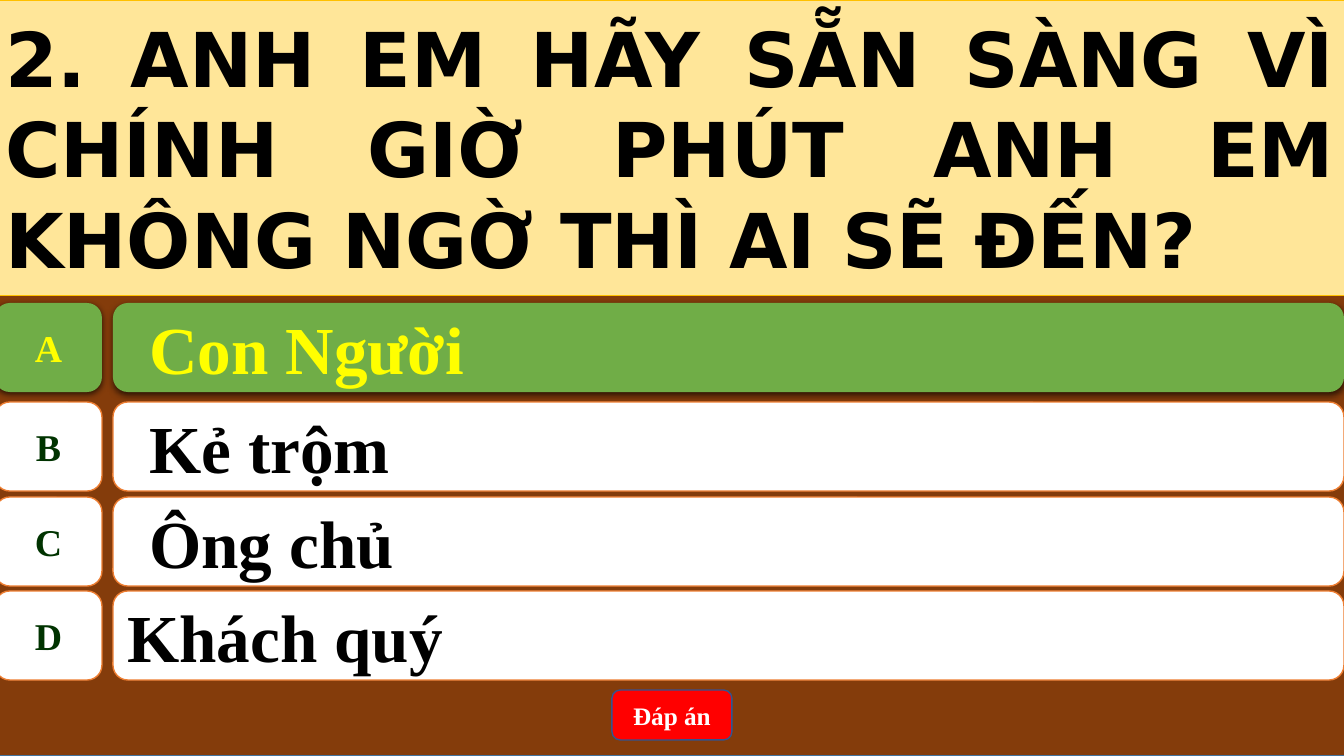
from lxml.etree import SubElement
from pptx import Presentation
from pptx.dml.color import RGBColor
from pptx.enum.shapes import MSO_SHAPE
from pptx.enum.text import MSO_ANCHOR, MSO_AUTO_SIZE, PP_ALIGN
from pptx.oxml.ns import qn
from pptx.util import Pt

QUESTION = "2. ANH EM HÃY SẴN SÀNG VÌ CHÍNH GIỜ PHÚT ANH EM KHÔNG NGỜ THÌ AI SẼ ĐẾN?"
# letter, answer, top, left text margin (px), correct
ANSWERS = [
    ("A", "Con Người", 303, 32, True),
    ("B", "Kẻ trộm", 402, 32, False),
    ("C", "Ông chủ", 497, 32, False),
    ("D", "Khách quý", 591, 10, False),
]
BUTTON = "Đáp án"

SERIF = "Times New Roman"
EDGE, FULL_WIDTH = -5, 1350
LETTER_WIDTH, ANSWER_LEFT, ANSWER_WIDTH, ROW_HEIGHT = 107, 113, 1231, 89


def px(length):
    return round(length * 914400 / 100.8)


def color(value):
    return RGBColor.from_string(value)


def paint(shape, fill, line=None, width=1):
    shape.fill.solid()
    shape.fill.fore_color.rgb = color(fill)
    if line:
        shape.line.color.rgb = color(line)
        shape.line.width = Pt(width)
    else:
        shape.line.fill.background()


def write(shape, text, size, ink, font=SERIF, align=PP_ALIGN.LEFT):
    frame = shape.text_frame
    frame.text = text
    frame.word_wrap = True
    frame.auto_size = MSO_AUTO_SIZE.NONE
    frame.vertical_anchor = MSO_ANCHOR.MIDDLE
    paragraph = frame.paragraphs[0]
    paragraph.alignment = align
    paragraph.font.name = font
    paragraph.font.size = Pt(size)
    paragraph.font.bold = True
    paragraph.font.color.rgb = color(ink)


def add_box(kind, left, top, width, height, fill, line=None):
    shape = slide.shapes.add_shape(kind, px(left), px(top), px(width), px(height))
    shape.shadow.inherit = False
    paint(shape, fill, line)
    return shape


def add_shadow(shape):
    """Cast a soft black shadow straight down."""
    effects = shape.element.spPr.find(qn("a:effectLst"))
    shadow = SubElement(effects, qn("a:outerShdw"), blurRad=str(Pt(4.5)),
                        dist=str(Pt(1.5)), dir="5400000", rotWithShape="0")
    black = SubElement(shadow, qn("a:srgbClr"), val="000000")
    SubElement(black, qn("a:alpha"), val="63000")


presentation = Presentation()
presentation.slide_width, presentation.slide_height = px(1344), px(756)
slide = presentation.slides.add_slide(presentation.slide_layouts[5])

title = slide.shapes.title
title.left, title.top, title.width, title.height = px(EDGE), 0, px(FULL_WIDTH), px(295)
paint(title, "FFE699", "FFC000", 0.5)
write(title, QUESTION, 54, "000000", "DejaVu Sans", PP_ALIGN.JUSTIFY)

backdrop = add_box(MSO_SHAPE.RECTANGLE, EDGE, 0, FULL_WIDTH, 756, "843C0B", "43739E")
title.element.addprevious(backdrop.element)

for letter, answer, top, margin, correct in ANSWERS:
    fill, line = ("70AD47", None) if correct else ("FFFFFF", "ED7D31")
    answer_box = add_box(MSO_SHAPE.ROUNDED_RECTANGLE, ANSWER_LEFT, top,
                         ANSWER_WIDTH, ROW_HEIGHT, fill, line)
    write(answer_box, answer, 48, "FFFF00" if correct else "000000")
    answer_box.text_frame.margin_left = px(margin)
    letter_box = add_box(MSO_SHAPE.FLOWCHART_ALTERNATE_PROCESS, EDGE, top,
                         LETTER_WIDTH, ROW_HEIGHT, fill, line)
    write(letter_box, letter, 27, "FFFF00" if correct else "003300", align=PP_ALIGN.CENTER)
    if correct:
        add_shadow(answer_box)
        add_shadow(letter_box)

button = add_box(MSO_SHAPE.ROUNDED_RECTANGLE, 612, 690, 120, 50, "FF0000", "325491")
write(button, BUTTON, 18, "FFFFFF", align=PP_ALIGN.CENTER)

presentation.save("out.pptx")
